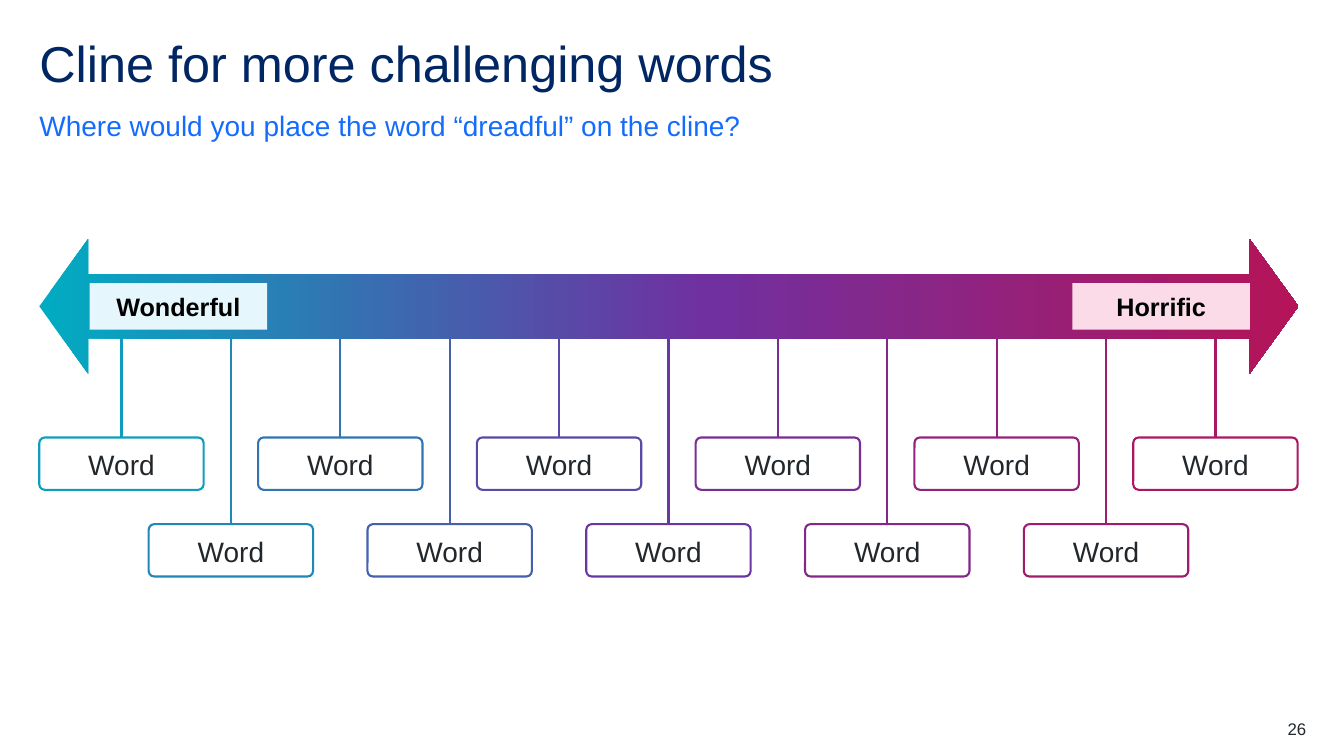
from copy import deepcopy

from lxml import etree
from pptx import Presentation
from pptx.dml.color import RGBColor
from pptx.enum.shapes import MSO_CONNECTOR, MSO_SHAPE
from pptx.enum.text import MSO_ANCHOR, MSO_AUTO_SIZE, PP_ALIGN
from pptx.oxml.ns import qn
from pptx.util import Pt

ARROW = MSO_SHAPE.LEFT_RIGHT_ARROW
RECT = MSO_SHAPE.RECTANGLE
ROUND = MSO_SHAPE.ROUNDED_RECTANGLE
STRAIGHT = MSO_CONNECTOR.STRAIGHT
TOP, MIDDLE, BOTTOM = MSO_ANCHOR.TOP, MSO_ANCHOR.MIDDLE, MSO_ANCHOR.BOTTOM
LEFT, CENTER, RIGHT = PP_ALIGN.LEFT, PP_ALIGN.CENTER, PP_ALIGN.RIGHT
NO_FIT = MSO_AUTO_SIZE.NONE

FONT = "Arial"
NAVY = RGBColor(0x00, 0x26, 0x64)
BLUE = RGBColor(0x14, 0x6C, 0xFD)
BLACK = RGBColor(0x00, 0x00, 0x00)
DARK = RGBColor(0x22, 0x27, 0x2B)
ICE = RGBColor(0xE5, 0xF7, 0xFC)
PINK = RGBColor(0xFB, 0xDB, 0xE7)
STOPS = [
    (0, RGBColor(0x00, 0xAC, 0xC2)),
    (0.53, RGBColor(0x70, 0x30, 0xA0)),
    (1, RGBColor(0xB5, 0x14, 0x58)),
]
SCALE = [
    RGBColor(0x0E, 0x9D, 0xBE),
    RGBColor(0x20, 0x88, 0xB8),
    RGBColor(0x32, 0x74, 0xB3),
    RGBColor(0x45, 0x60, 0xAD),
    RGBColor(0x57, 0x4B, 0xA7),
    RGBColor(0x6A, 0x37, 0xA2),
    RGBColor(0x78, 0x2D, 0x97),
    RGBColor(0x85, 0x27, 0x8A),
    RGBColor(0x92, 0x22, 0x7D),
    RGBColor(0x9E, 0x1D, 0x70),
    RGBColor(0xAB, 0x18, 0x62),
]

EDGE = 28.1
STEP = 78.14
BOX_W, BOX_H = 117.4, 37.4
ROWS = [312.5, 374.4]
STEM_TOP = 241.9
TAG_TOP, TAG_W, TAG_H = 202.3, 126.7, 33.1


def place(shape, left, top, width, height):
    shape.left, shape.top = Pt(left), Pt(top)
    shape.width, shape.height = Pt(width), Pt(height)


def write(shape, text, size, color, align=LEFT, anchor=TOP,
          inset=(0, 0, 0, 0), bold=False):
    """Fill the shape with one run of text and return its paragraph."""
    frame = shape.text_frame
    frame.word_wrap = True
    frame.auto_size = NO_FIT
    frame.vertical_anchor = anchor
    frame.margin_left, frame.margin_top = Pt(inset[0]), Pt(inset[1])
    frame.margin_right, frame.margin_bottom = Pt(inset[2]), Pt(inset[3])
    para = frame.paragraphs[0]
    para.alignment = align
    run = para.add_run()
    run.text = text
    font = run.font
    font.name, font.size, font.bold = FONT, Pt(size), bold
    font.color.rgb = color
    return para


def add_heads(slide):
    title, lead = slide.shapes.title, slide.placeholders[1]
    place(title, EDGE, 28.1, 904.3, 43.2)
    para = write(title, "Cline for more challenging words", 36, NAVY)
    para.line_spacing = 0.9

    place(lead, EDGE, 77, 904.3, 24.5)
    para = write(lead, "Where would you place the word “dreadful” on the cline?",
                 20, BLUE, anchor=BOTTOM)
    para.line_spacing = 1.5
    para.space_before, para.space_after = Pt(0), Pt(12)
    props = para._p.get_or_add_pPr()
    props.set("marL", "0")
    props.set("indent", "0")
    etree.SubElement(props, qn("a:buNone"))


def add_arrow(slide):
    arrow = slide.shapes.add_shape(
        ARROW, Pt(EDGE), Pt(170.6), Pt(899.3), Pt(96.5))
    arrow.shadow.inherit = False
    arrow.adjustments[0], arrow.adjustments[1] = 0.475, 0.362
    arrow.line.fill.background()
    fill = arrow.fill
    fill.gradient()
    fill.gradient_angle = 0
    first = arrow._element.spPr.find(".//" + qn("a:gs"))
    first.addnext(deepcopy(first))
    for stop, (share, color) in zip(fill.gradient_stops, STOPS):
        stop.position = share
        stop.color.rgb = color


def add_tag(slide, left, text, color):
    tag = slide.shapes.add_shape(
        RECT, Pt(left), Pt(TAG_TOP), Pt(TAG_W), Pt(TAG_H))
    tag.shadow.inherit = False
    tag.fill.solid()
    tag.fill.fore_color.rgb = color
    tag.line.fill.background()
    write(tag, text, 18, BLACK, CENTER, MIDDLE, (6.5, 3, 6.5, 3), True)


def add_box(slide, left, top, color):
    box = slide.shapes.add_shape(
        ROUND, Pt(left), Pt(top), Pt(BOX_W), Pt(BOX_H))
    box.shadow.inherit = False
    box.adjustments[0] = 0.106
    box.fill.background()
    box.line.color.rgb = color
    box.line.width = Pt(1.5)
    write(box, "Word", 20, DARK, CENTER, BOTTOM, (11.5, 0, 11.5, 5))


def add_stem(slide, x, end, color):
    stem = slide.shapes.add_connector(
        STRAIGHT, Pt(x), Pt(STEM_TOP), Pt(x), Pt(end))
    stem.line.color.rgb = color
    stem.line.width = Pt(1.5)
    etree.SubElement(stem._element.spPr, qn("a:effectLst"))


def add_number(slide, text):
    box = slide.shapes.add_textbox(Pt(876.2), Pt(513.4), Pt(56.9), Pt(14.4))
    write(box, text, 12, DARK, RIGHT)


def main():
    deck = Presentation()
    deck.slide_width, deck.slide_height = Pt(960), Pt(540)
    slide = deck.slides.add_slide(deck.slide_layouts[1])
    add_heads(slide)
    add_arrow(slide)
    add_tag(slide, 64.1, "Wonderful", ICE)
    add_tag(slide, 766.1, "Horrific", PINK)
    for i, color in enumerate(SCALE):
        left, top = EDGE + i * STEP, ROWS[i % 2]
        add_box(slide, left, top, color)
        add_stem(slide, left + BOX_W / 2, top, color)
    add_number(slide, "26")
    deck.save("out.pptx")


if __name__ == "__main__":
    main()
